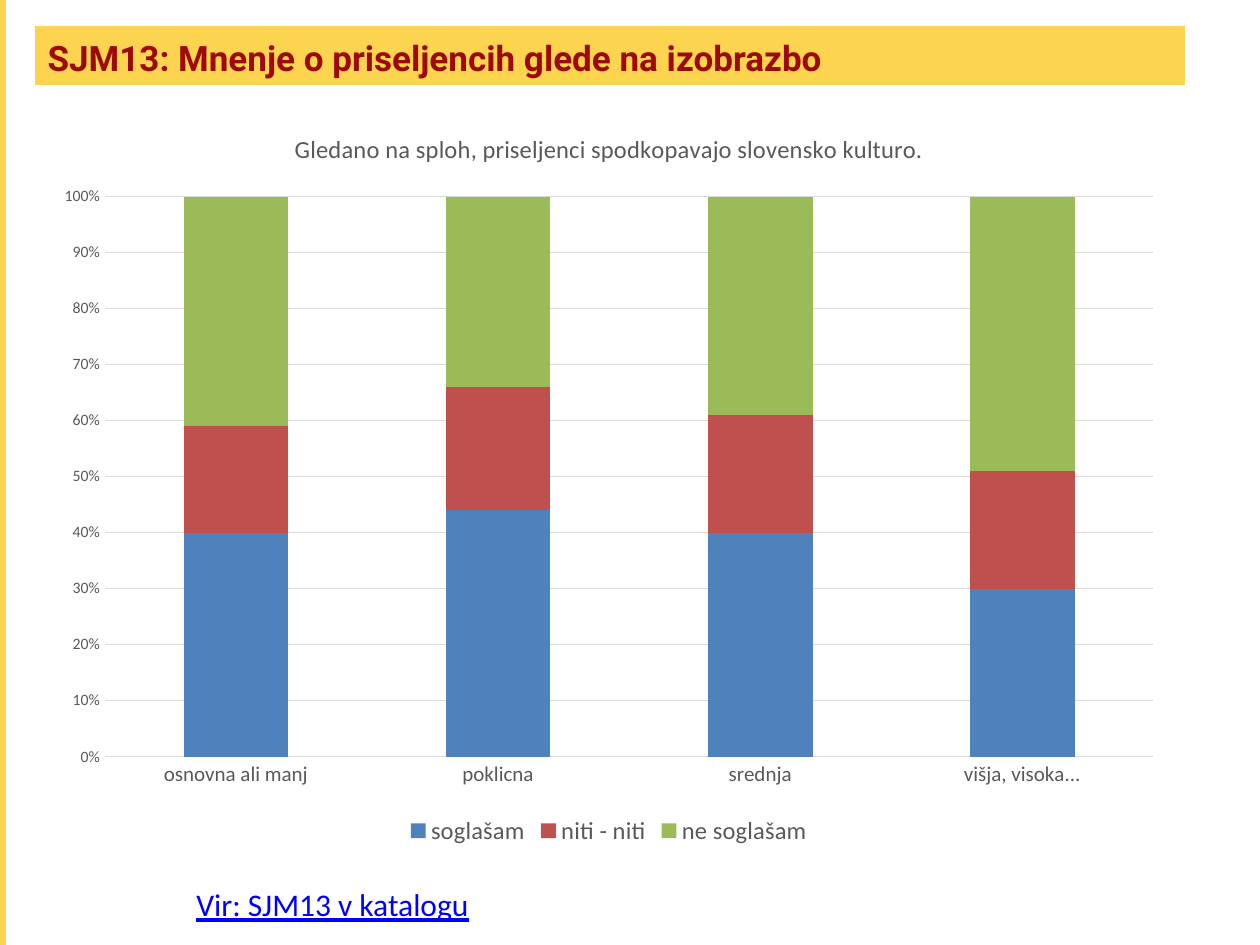
from pptx import Presentation
from pptx.chart.data import CategoryChartData
from pptx.dml.color import RGBColor
from pptx.enum.chart import XL_CHART_TYPE, XL_LEGEND_POSITION, XL_TICK_MARK
from pptx.enum.shapes import MSO_SHAPE
from pptx.enum.text import MSO_ANCHOR, PP_ALIGN
from pptx.util import Emu, Pt

TITLE = "SJM13: Mnenje o priseljencih glede na izobrazbo"
CHART_TITLE = "Gledano na sploh, priseljenci spodkopavajo slovensko kulturo."
SOURCE = "Vir: SJM13 v katalogu"
EDUCATION = ["osnovna ali manj", "poklicna", "srednja", "višja, visoka..."]
OPINIONS = [
    ("soglašam", (40, 44, 40, 30), "agree"),
    ("niti - niti", (19, 22, 21, 21), "neutral"),
    ("ne soglašam", (41, 34, 39, 49), "disagree"),
]
COLORS = {
    "band": "FDD44F", "title": "9D0A0E", "text": "595959", "grid": "D9D9D9",
    "link": "0000FF", "agree": "4F81BD", "neutral": "C0504D", "disagree": "9BBB59",
}
BOXES = {  # left, top, width, height in px
    "bar": (0, 0, 6, 945),
    "title": (35, 26, 1150, 59),
    "chart": (42, 106, 1134, 745),
    "source": (184, 879, 318, 50),
}
PX = 914400 / 126


def box(name):
    return [Emu(round(v * PX)) for v in BOXES[name]]


def rgb(name):
    return RGBColor.from_string(COLORS[name])


def fill(obj, color):
    obj.fill.solid()
    obj.fill.fore_color.rgb = rgb(color)


def style(font, color, **values):
    font.color.rgb = rgb(color)
    for key, value in values.items():
        setattr(font, key, value)


def add_title(slide):
    sp = slide.shapes.title
    sp.left, sp.top, sp.width, sp.height = box("title")
    fill(sp, "band")
    tf = sp.text_frame
    tf.text = TITLE
    tf.vertical_anchor = MSO_ANCHOR.BOTTOM
    p = tf.paragraphs[0]
    p.alignment = PP_ALIGN.LEFT
    style(p.runs[0].font, "title", name="Roboto", size=Pt(20), bold=True)


def add_bar(slide):
    sp = slide.shapes.add_shape(MSO_SHAPE.RECTANGLE, *box("bar"))
    sp.shadow.inherit = False
    fill(sp, "band")
    sp.line.fill.background()


def add_opinion_chart(slide):
    data = CategoryChartData(number_format="0")
    data.categories = EDUCATION
    for name, values, _ in OPINIONS:
        data.add_series(name, values)
    chart = slide.shapes.add_chart(
        XL_CHART_TYPE.COLUMN_STACKED_100, *box("chart"), data).chart
    style(chart.font, "text", name="Calibri", size=Pt(10))

    tf = chart.chart_title.text_frame
    tf.text = CHART_TITLE
    style(tf.paragraphs[0].runs[0].font, "text",
          name="Calibri", size=Pt(14), bold=False)
    chart.chart_title.include_in_layout = False

    chart.has_legend = True
    chart.legend.position = XL_LEGEND_POSITION.BOTTOM
    chart.legend.include_in_layout = False
    style(chart.legend.font, "text", name="Calibri", size=Pt(14))

    plot = chart.plots[0]
    plot.gap_width, plot.overlap, plot.vary_by_categories = 150, 100, False
    for series, (_, _, color) in zip(plot.series, OPINIONS):
        fill(series.format, color)

    cat, val = chart.category_axis, chart.value_axis
    for axis, size in ((cat, 12), (val, 9)):
        axis.major_tick_mark = axis.minor_tick_mark = XL_TICK_MARK.NONE
        style(axis.tick_labels.font, "text", name="Calibri", size=Pt(size))
    for line in (cat.format.line, val.major_gridlines.format.line):
        line.color.rgb = rgb("grid")
        line.width = Pt(0.75)
    val.format.line.fill.background()
    val.minimum_scale, val.maximum_scale, val.major_unit = 0, 1, 0.1
    val.tick_labels.number_format = "0%"
    val.tick_labels.number_format_is_linked = False


def add_source(slide):
    tf = slide.shapes.add_textbox(*box("source")).text_frame
    tf.word_wrap = True
    tf.text = SOURCE
    style(tf.paragraphs[0].runs[0].font, "link",
          name="Calibri", size=Pt(18), underline=True)


def main():
    prs = Presentation()
    prs.slide_width, prs.slide_height = Emu(round(1260 * PX)), Emu(round(945 * PX))
    slide = prs.slides.add_slide(prs.slide_layouts[5])
    add_bar(slide)
    add_title(slide)
    add_opinion_chart(slide)
    add_source(slide)
    prs.save("out.pptx")


if __name__ == "__main__":
    main()
